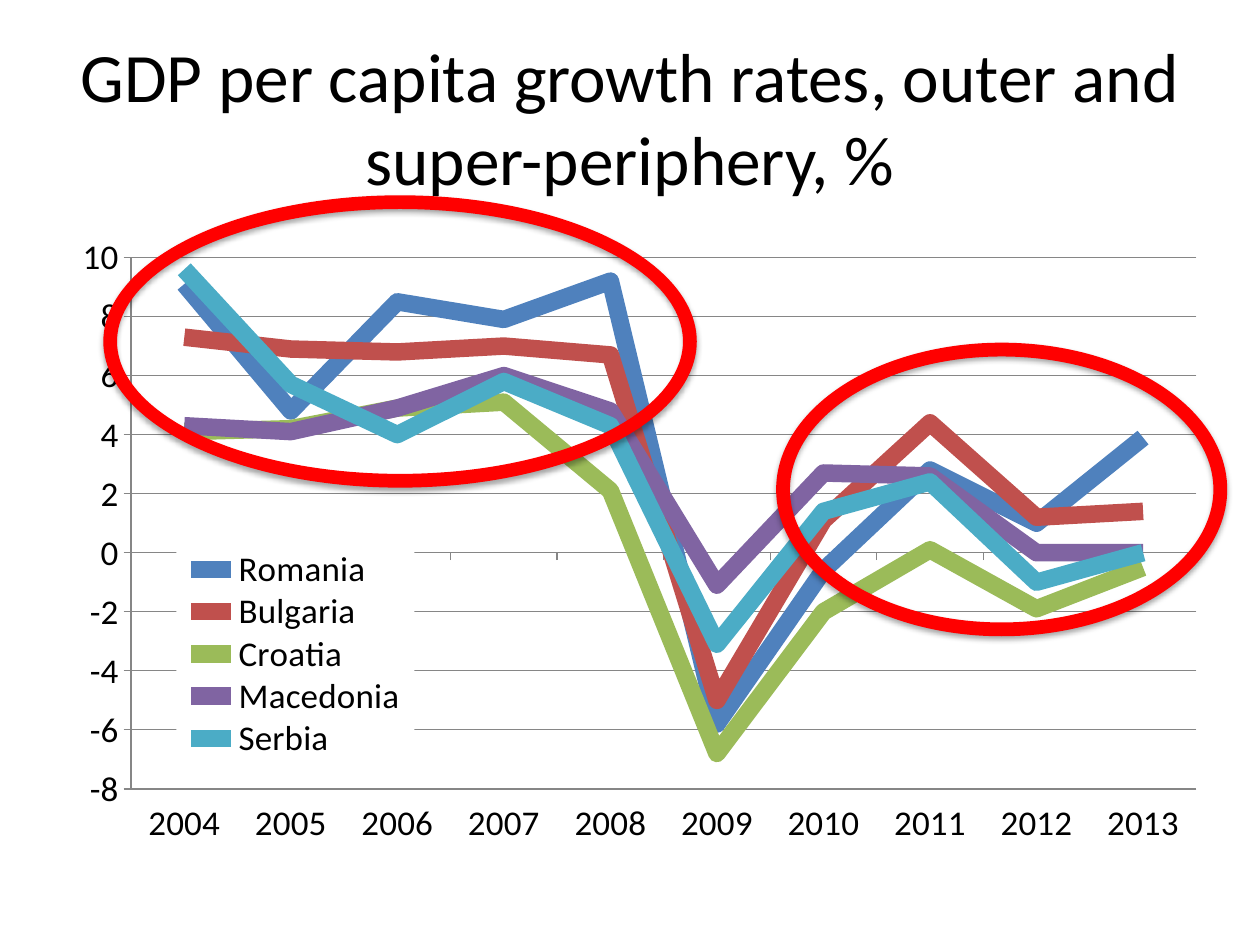
import pptx
import pptx.chart.data
import pptx.dml.color
import pptx.enum.chart
import pptx.enum.shapes
import pptx.enum.text
import pptx.oxml
import pptx.oxml.ns
import pptx.util
from pptx.util import Inches

YEARS = [str(year) for year in range(2004, 2014)]
GROWTH = [
    ("Romania", "4F81BD", [9.1, 4.8, 8.5, 7.9, 9.2, -5.8, -0.6, 2.8, 1, 3.9]),
    ("Bulgaria", "C0504D", [7.3, 6.9, 6.8, 7, 6.7, -5, 1.1, 4.4, 1.2, 1.4]),
    ("Croatia", "9BBB59", [4.1, 4.2, 4.9, 5.1, 2.1, -6.8, -2, 0.1, -1.9, -0.5]),
    ("Macedonia", "8064A2", [4.3, 4.1, 4.9, 6, 4.8, -1.1, 2.7, 2.6, None, None]),
    ("Serbia", "4BACC6", [9.6, 5.7, 4, 5.8, 4.3, -3.1, 1.4, 2.4, -1, None]),
]


def color(value):
    return pptx.dml.color.RGBColor.from_string(value)


def manual_layout(left, top, width, height, inner=False):
    target = '<c:layoutTarget val="inner"/>' if inner else ""
    return pptx.oxml.parse_xml(
        f'<c:layout {pptx.oxml.ns.nsdecls("c")}><c:manualLayout>{target}'
        '<c:xMode val="edge"/><c:yMode val="edge"/>'
        f'<c:x val="{left}"/><c:y val="{top}"/><c:w val="{width}"/><c:h val="{height}"/>'
        "</c:manualLayout></c:layout>"
    )


class SlideBuilder:
    font = "Calibri"
    ink = "000000"
    grid = "868686"
    highlight = "FF0000"

    def __init__(self, page):
        self.page = page

    def style_font(self, font, size):
        font.name = self.font
        font.size = pptx.util.Pt(size)
        font.color.rgb = color(self.ink)

    def title(self, text, left, top, width, height):
        box = self.page.shapes.add_textbox(Inches(left), Inches(top), Inches(width), Inches(height))
        frame = box.text_frame
        frame.word_wrap = True
        frame.vertical_anchor = pptx.enum.text.MSO_ANCHOR.MIDDLE
        frame.text = text
        para = frame.paragraphs[0]
        para.alignment = pptx.enum.text.PP_ALIGN.CENTER
        self.style_font(para.runs[0].font, 39.6)

    def line_chart(self, categories, rows, left, top, width, height):
        data = pptx.chart.data.CategoryChartData()
        data.categories = categories
        for name, _, values in rows:
            data.add_series(name, values)
        chart = self.page.shapes.add_chart(
            pptx.enum.chart.XL_CHART_TYPE.LINE,
            Inches(left), Inches(top), Inches(width), Inches(height), data,
        ).chart
        chart.has_title = False
        self.style_font(chart.font, 20)
        chart.plots[0].vary_by_categories = False
        for series, (_, shade, _) in zip(chart.plots[0].series, rows):
            series.smooth = False
            series.marker.style = pptx.enum.chart.XL_MARKER_STYLE.NONE
            series.format.line.color.rgb = color(shade)
            series.format.line.width = pptx.util.Pt(10)
        self.axes(chart)
        self.legend(chart)
        space = chart.element
        space.find(".//" + pptx.oxml.ns.qn("c:dispBlanksAs")).set("val", "zero")
        area = space.find(".//" + pptx.oxml.ns.qn("c:plotArea"))
        for layout in area.findall(pptx.oxml.ns.qn("c:layout")):
            area.remove(layout)
        area.insert(0, manual_layout(0.06, 0.06, 0.94, 0.86, inner=True))

    def axes(self, chart):
        values = chart.value_axis
        values.minimum_scale, values.maximum_scale, values.major_unit = -8, 10, 2
        values.has_major_gridlines = True
        values.tick_labels.number_format = "0"
        values.tick_labels.number_format_is_linked = False
        chart.category_axis.tick_label_position = pptx.enum.chart.XL_TICK_LABEL_POSITION.LOW
        for axis in (values, chart.category_axis):
            axis.major_tick_mark = pptx.enum.chart.XL_TICK_MARK.OUTSIDE
        for part in (values, chart.category_axis, values.major_gridlines):
            part.format.line.color.rgb = color(self.grid)
            part.format.line.width = pptx.util.Pt(0.75)

    def legend(self, chart):
        chart.has_legend = True
        legend = chart.legend
        legend.position = pptx.enum.chart.XL_LEGEND_POSITION.RIGHT
        legend.include_in_layout = False
        self.style_font(legend.font, 20)
        element = legend._element
        for layout in element.findall(pptx.oxml.ns.qn("c:layout")):
            element.remove(layout)
        element.find(pptx.oxml.ns.qn("c:legendPos")).addnext(manual_layout(0.1, 0.53, 0.21, 0.34))
        element.find(pptx.oxml.ns.qn("c:overlay")).addnext(pptx.oxml.parse_xml(
            f'<c:spPr {pptx.oxml.ns.nsdecls("c", "a")}>'
            '<a:solidFill><a:srgbClr val="FFFFFF"/></a:solidFill></c:spPr>'
        ))

    def ring(self, left, top, width, height):
        ring = self.page.shapes.add_shape(
            pptx.enum.shapes.MSO_SHAPE.DONUT,
            Inches(left), Inches(top), Inches(width), Inches(height),
        )
        ring.adjustments[0] = 0.047
        ring.fill.solid()
        ring.fill.fore_color.rgb = color(self.highlight)
        ring.line.fill.background()
        ring.shadow.inherit = False
        effects = ring.element.spPr.find(pptx.oxml.ns.qn("a:effectLst"))
        effects.append(pptx.oxml.parse_xml(
            f'<a:outerShdw {pptx.oxml.ns.nsdecls("a")} blurRad="{pptx.util.Pt(3.1)}" '
            f'dist="{pptx.util.Pt(1.8)}" dir="5400000" rotWithShape="0">'
            '<a:srgbClr val="000000"><a:alpha val="35000"/></a:srgbClr></a:outerShdw>'
        ))


def main():
    deck = pptx.Presentation()
    deck.slide_width, deck.slide_height = Inches(10), Inches(7.5)
    builder = SlideBuilder(deck.slides.add_slide(deck.slide_layouts[6]))
    builder.title("GDP per capita growth rates, outer and super-periphery, %", 0.5, 0.3, 9, 1.25)
    builder.line_chart(YEARS, GROWTH, 0.5, 1.75, 9, 4.95)
    builder.ring(0.82, 1.55, 4.71, 2.32)
    builder.ring(6.16, 2.72, 3.58, 2.33)
    deck.save("out.pptx")


if __name__ == "__main__":
    main()
